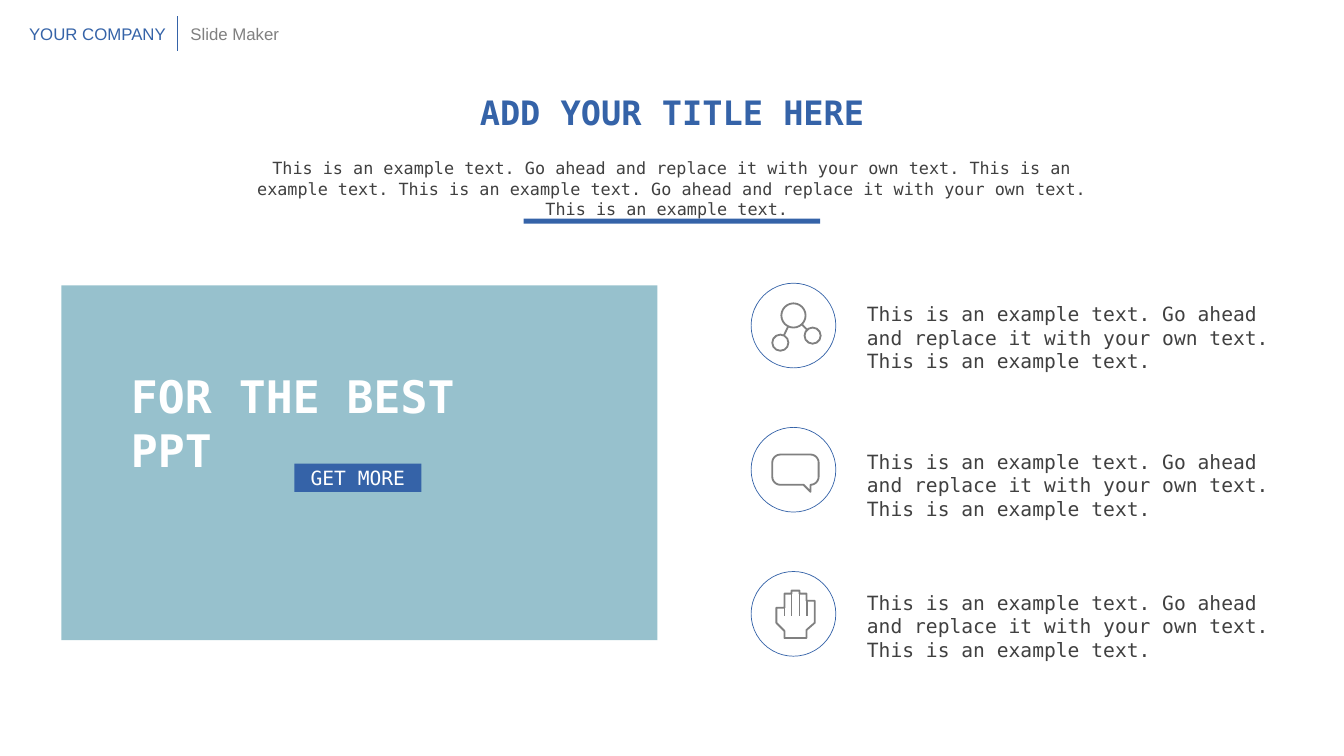
import math
from lxml import etree
from pptx import Presentation
from pptx import util as u
from pptx.dml.color import RGBColor
from pptx.enum import shapes, text
from pptx.oxml.ns import qn

COLORS = {"blue": "3563A8", "gray": "808080", "dark": "404040",
          "teal": "31859C", "white": "FFFFFF"}
MONO, SANS = "DejaVu Sans Mono", "Arial"
HAIRLINE, ICON_LINE = 0.5, 1.3

SAMPLE = ("This is an example text. Go ahead and replace it with your own text. "
          "This is an example text.")
TITLE = "ADD YOUR TITLE HERE"
INTRO = f"{SAMPLE} {SAMPLE} "
SLOGAN = "FOR THE BEST PPT"
BUTTON = "GET MORE"
HEADER = [("YOUR COMPANY", "blue", 0.19, 1.57), ("Slide Maker", "gray", 1.79, 1.11)]
ITEMS = [("network", SAMPLE, 2.95), ("bubble", SAMPLE, 4.41), ("hand", SAMPLE, 5.81)]

WIDTH, HEIGHT = 13.33, 7.5
AXIS = WIDTH / 2
HEADER_TOP, HEADER_HEIGHT = 0.19, 0.3
DIVIDER = (1.76, 0.16, 1.76, 0.51)
TITLE_TOP, TITLE_WIDTH = 0.86, 5.29
INTRO_TOP, INTRO_WIDTH = 1.52, 8.46
RULE_TOP, RULE_WIDTH, RULE_HEIGHT = 2.17, 2.94, 0.05
LINE_BOX = 0.5
PANEL_BOX = (0.61, 2.83, 5.91, 3.52)
SLOGAN_BOX = (1.2, 3.61, 4.29, 0.61)
BUTTON_BOX = (2.92, 4.6, 1.26, 0.28)
ICON_X, FIRST_ICON_Y, ICON_STEP, RING_RADIUS = 7.87, 3.23, 1.43, 0.42
ITEM_LEFT, ITEM_WIDTH, ITEM_HEIGHT = 8.5, 4.51, 0.57

NODES = [(0, -0.1, 0.12), (-0.13, 0.17, 0.08), (0.19, 0.1, 0.08)]
BUBBLE_LEFT, BUBBLE_RIGHT, BUBBLE_HALF_HEIGHT, BUBBLE_CORNER = -0.21, 0.25, 0.15, 0.08
BUBBLE_TAIL = [(0.17, 0.15), (0.17, 0.22), (0.1, 0.15)]
FINGERS = [(-0.17, -0.06), (-0.09, -0.2), (-0.02, -0.23), (0.06, -0.2), (0.13, -0.13)]
HAND_RIGHT, FINGER_END = 0.21, 0.02
PALM = [(0.21, 0.09), (0.13, 0.16), (0.13, 0.24), (-0.09, 0.24), (-0.09, 0.17),
        (-0.17, 0.09)]

deck = Presentation()
deck.slide_width, deck.slide_height = u.Inches(WIDTH), u.Inches(HEIGHT)
page = deck.slides.add_slide(deck.slide_layouts[5])


def color(name):
    return RGBColor.from_string(COLORS[name])


def inches(*lengths):
    return [u.Inches(length) for length in lengths]


def centered(top, width, height):
    return AXIS - width / 2, top, width, height


def write(shape, words, size=14, ink="dark", font=MONO, bold=False, wrap=True,
          align=text.PP_ALIGN.LEFT, anchor=text.MSO_ANCHOR.TOP):
    frame = shape.text_frame
    frame.word_wrap = wrap
    frame.auto_size = text.MSO_AUTO_SIZE.NONE
    frame.vertical_anchor = anchor
    para = frame.paragraphs[0]
    para.alignment = align
    span = para.add_run()
    span.text = words
    span.font.size, span.font.name, span.font.bold = u.Pt(size), font, bold
    span.font.color.rgb = color(ink)


def add_text(words, box, **style):
    write(page.shapes.add_textbox(*inches(*box)), words, **style)


def paint(shape, fill=None, line=None, weight=ICON_LINE):
    shape.shadow.inherit = False
    if fill:
        shape.fill.solid()
        shape.fill.fore_color.rgb = color(fill)
    else:
        shape.fill.background()
    if line:
        shape.line.color.rgb = color(line)
        shape.line.width = u.Pt(weight)
    else:
        shape.line.fill.background()


def add_rect(box, fill):
    rect = page.shapes.add_shape(shapes.MSO_SHAPE.RECTANGLE, *inches(*box))
    paint(rect, fill=fill)
    return rect


def add_circle(x, y, radius, line="gray", weight=ICON_LINE):
    box = inches(x - radius, y - radius, 2 * radius, 2 * radius)
    paint(page.shapes.add_shape(shapes.MSO_SHAPE.OVAL, *box), line=line, weight=weight)


def add_line(x1, y1, x2, y2, line="gray", weight=ICON_LINE):
    link = page.shapes.add_connector(shapes.MSO_CONNECTOR.STRAIGHT,
                                     *inches(x1, y1, x2, y2))
    link.line.color.rgb = color(line)
    link.line.width = u.Pt(weight)
    etree.SubElement(link.element.spPr, qn("a:effectLst"))


def add_outline(points, x, y):
    dots = inches(*(length for dx, dy in points for length in (x + dx, y + dy)))
    dots = list(zip(dots[::2], dots[1::2]))
    builder = page.shapes.build_freeform(*dots[0])
    builder.add_line_segments(dots[1:], close=True)
    paint(builder.convert_to_shape(), line="gray")


def quarter_arc(x, y, radius, start):
    angles = [math.radians(start + turn) for turn in range(0, 91, 15)]
    return [(x + radius * math.cos(angle), y + radius * math.sin(angle))
            for angle in angles]


def draw_network(x, y):
    hub_x, hub_y, hub_radius = NODES[0]
    for dx, dy, radius in NODES:
        add_circle(x + dx, y + dy, radius)
    for dx, dy, radius in NODES[1:]:
        distance = math.dist((hub_x, hub_y), (dx, dy))
        across, down = (dx - hub_x) / distance, (dy - hub_y) / distance
        add_line(x + hub_x + across * hub_radius, y + hub_y + down * hub_radius,
                 x + dx - across * radius, y + dy - down * radius)


def draw_bubble(x, y):
    left, right = BUBBLE_LEFT + BUBBLE_CORNER, BUBBLE_RIGHT - BUBBLE_CORNER
    bottom = BUBBLE_HALF_HEIGHT - BUBBLE_CORNER
    top = -bottom
    points = (quarter_arc(left, top, BUBBLE_CORNER, 180)
              + quarter_arc(right, top, BUBBLE_CORNER, 270)
              + quarter_arc(right, bottom, BUBBLE_CORNER, 0)
              + BUBBLE_TAIL
              + quarter_arc(left, bottom, BUBBLE_CORNER, 90))
    add_outline(points, x, y)


def draw_hand(x, y):
    rights = [left for left, top in FINGERS[1:]] + [HAND_RIGHT]
    tips = [point for (left, top), right in zip(FINGERS, rights)
            for point in ((left, top), (right, top))]
    add_outline(tips + PALM, x, y)
    for (_, last_top), (left, top) in zip(FINGERS, FINGERS[1:]):
        add_line(x + left, y + max(last_top, top), x + left, y + FINGER_END)


ICONS = {"network": draw_network, "bubble": draw_bubble, "hand": draw_hand}
CENTER = text.PP_ALIGN.CENTER

title = page.shapes.title
title.left, title.top, title.width, title.height = inches(
    *centered(TITLE_TOP, TITLE_WIDTH, LINE_BOX))
write(title, TITLE, size=24, ink="blue", bold=True, align=CENTER)

add_line(*DIVIDER, line="blue", weight=HAIRLINE)
for words, ink, left, width in HEADER:
    add_text(words, (left, HEADER_TOP, width, HEADER_HEIGHT),
             size=12, ink=ink, font=SANS, wrap=False)

add_rect(centered(RULE_TOP, RULE_WIDTH, RULE_HEIGHT), "blue")
add_text(INTRO, centered(INTRO_TOP, INTRO_WIDTH, LINE_BOX), size=12, align=CENTER)

for row, (icon, words, top) in enumerate(ITEMS):
    icon_y = FIRST_ICON_Y + row * ICON_STEP
    add_circle(ICON_X, icon_y, RING_RADIUS, line="blue", weight=HAIRLINE)
    ICONS[icon](ICON_X, icon_y)
    add_text(words, (ITEM_LEFT, top, ITEM_WIDTH, ITEM_HEIGHT))

panel = add_rect(PANEL_BOX, "teal")
panel_color = panel.element.spPr.find(qn("a:solidFill"))[0]
etree.SubElement(panel_color, qn("a:alpha"), val="50000")
add_text(SLOGAN, SLOGAN_BOX, size=32, ink="white", bold=True)
button = add_rect(BUTTON_BOX, "blue")
write(button, BUTTON, ink="white", align=CENTER, anchor=text.MSO_ANCHOR.MIDDLE)

deck.save("out.pptx")
